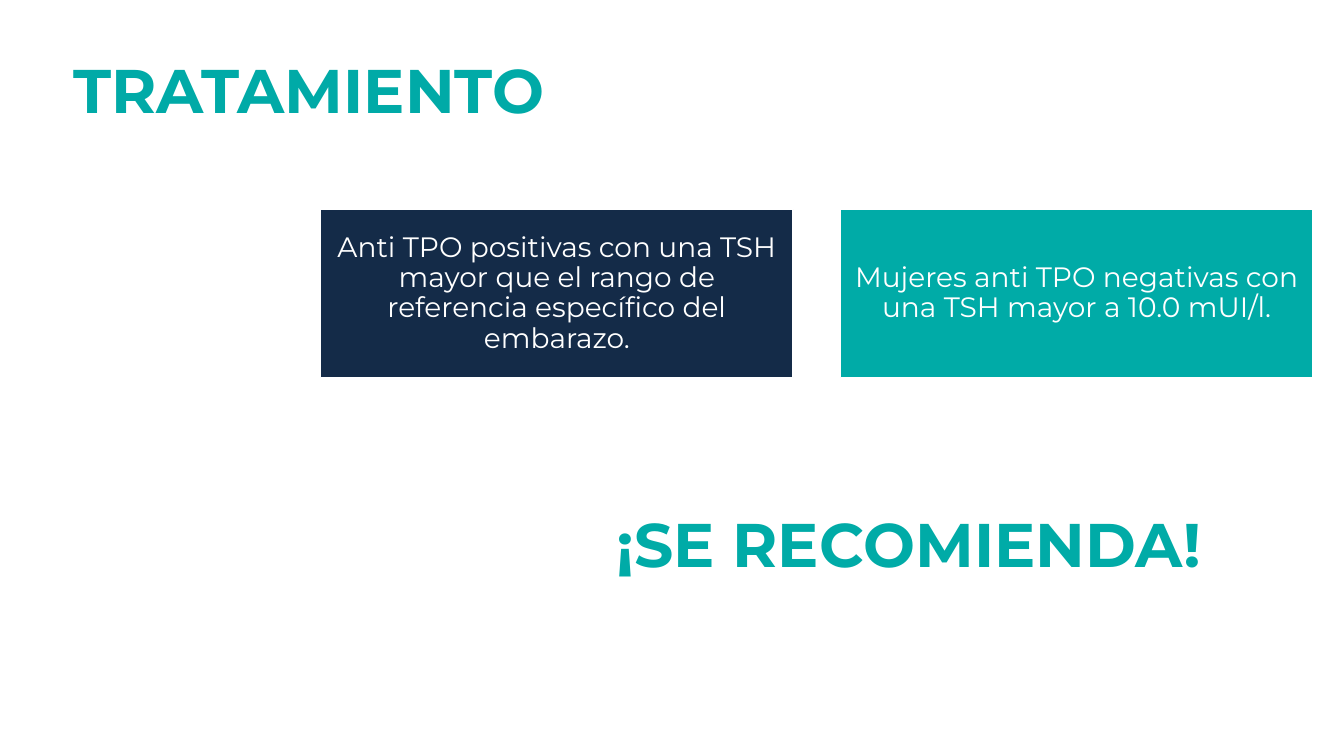
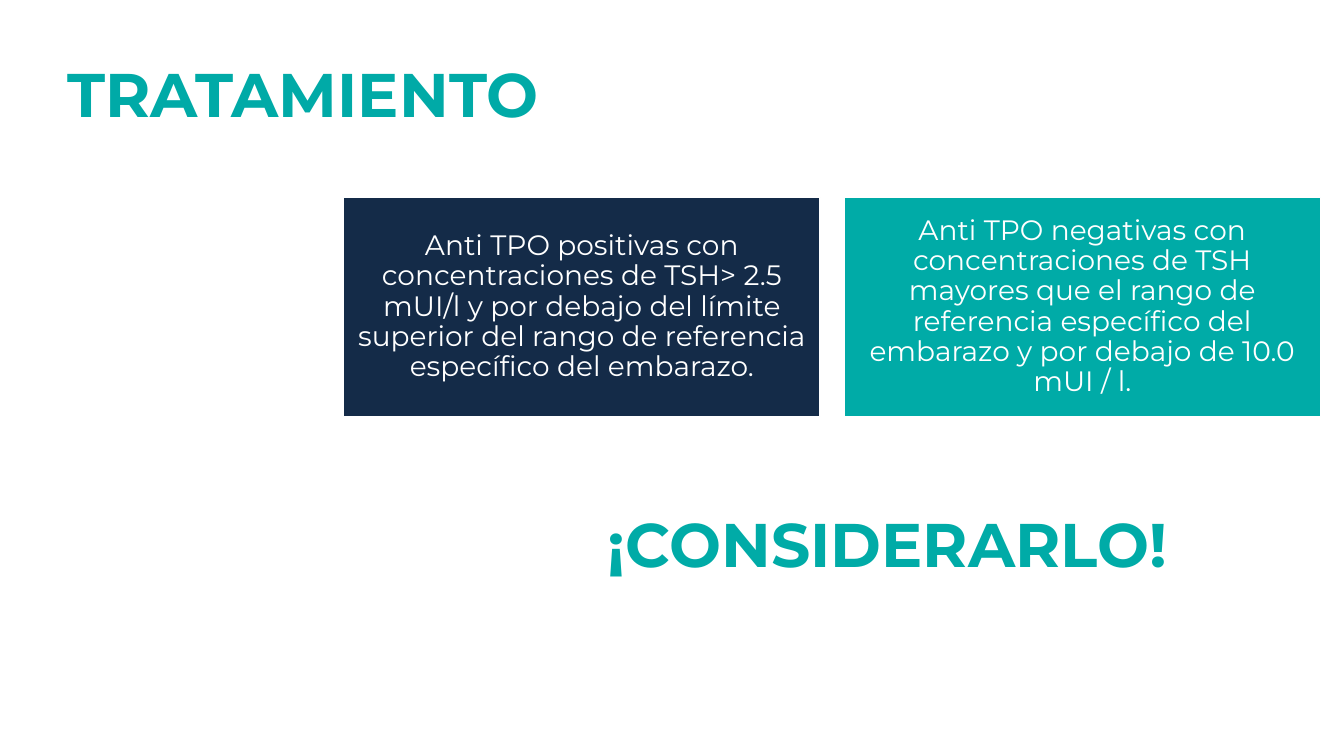
from pptx import Presentation
from pptx.dml.color import RGBColor
from pptx.enum import shapes, text
from pptx.util import Cm, Pt

FONT = "Montserrat"
NAVY = RGBColor(0x14, 0x2B, 0x48)
TEAL = RGBColor(0x00, 0xAB, 0xA7)
TITLE_TEAL = RGBColor(0x00, 0xAA, 0xA7)
WHITE = RGBColor(0xFF, 0xFF, 0xFF)

# Content; all places are left, top, width, height in cm
TITLE = "TRATAMIENTO"
CARD_FILLS = (NAVY, TEAL)
SLIDES = [
    {
        "title_at": (1.6, 0.53, 29.21, 3.68),
        "cards": [
            "Anti TPO positivas con una TSH mayor que el rango de referencia "
            "específico del embarazo.",
            "Mujeres anti TPO negativas con una TSH mayor a 10.0 mUI/l.",
        ],
        "first_card_at": (8.08, 5.28, 11.91, 4.24),
        "card_gap": 1.19,
        "verdict": "¡SE RECOMIENDA!",
        "verdict_at": (15.01, 12.62, 15.8, 2.13),
    },
    {
        "title_at": (1.45, 0.61, 29.21, 3.68),
        "cards": [
            "Anti TPO positivas con concentraciones de TSH> 2.5 mUI/l y por "
            "debajo del límite superior del rango de referencia específico "
            "del embarazo.",
            "Anti TPO negativas con concentraciones de TSH mayores que el "
            "rango de referencia específico del embarazo y por debajo de "
            "10.0 mUI / l.",
        ],
        "first_card_at": (8.66, 4.98, 12.01, 5.51),
        "card_gap": 0.6,
        "verdict": "¡CONSIDERARLO!",
        "verdict_at": (14.68, 12.62, 15.37, 2.13),
    },
]


def write(box, words, size, color, bold=False, align=text.PP_ALIGN.CENTER,
          spacing=1.0):
    frame = box.text_frame
    frame.word_wrap = True
    frame.vertical_anchor = text.MSO_ANCHOR.MIDDLE
    para = frame.paragraphs[0]
    para.alignment = align
    para.line_spacing = spacing
    span = para.add_run()
    span.text = words
    span.font.name = FONT
    span.font.size = Pt(size)
    span.font.bold = bold
    span.font.color.rgb = color


def add_title(page, at):
    box = page.shapes.add_textbox(*map(Cm, at))
    write(box, TITLE, 44, TITLE_TEAL, True, text.PP_ALIGN.LEFT, 0.9)


def add_card(page, at, words, fill):
    card = page.shapes.add_shape(shapes.MSO_SHAPE.RECTANGLE, *map(Cm, at))
    card.shadow.inherit = False
    card.fill.solid()
    card.fill.fore_color.rgb = fill
    card.line.color.rgb = WHITE
    card.line.width = Pt(1)
    frame = card.text_frame
    frame.margin_left = frame.margin_right = Cm(0.2)
    frame.margin_top = frame.margin_bottom = Cm(0.2)
    write(card, words, 20, WHITE, spacing=0.9)


def add_verdict(page, at, words):
    box = page.shapes.add_shape(shapes.MSO_SHAPE.RECTANGLE, *map(Cm, at))
    box.shadow.inherit = False
    box.fill.solid()
    box.fill.fore_color.rgb = WHITE
    box.line.fill.background()
    write(box, words, 44, TEAL, True)


def main():
    deck = Presentation()
    deck.slide_width, deck.slide_height = Cm(33.87), Cm(19.05)
    for content in SLIDES:
        page = deck.slides.add_slide(deck.slide_layouts[6])
        add_title(page, content["title_at"])

        # Equal cards side by side
        left, top, width, height = content["first_card_at"]
        for words, fill in zip(content["cards"], CARD_FILLS):
            add_card(page, (left, top, width, height), words, fill)
            left += width + content["card_gap"]

        add_verdict(page, content["verdict_at"], content["verdict"])
    deck.save("out.pptx")


if __name__ == "__main__":
    main()
